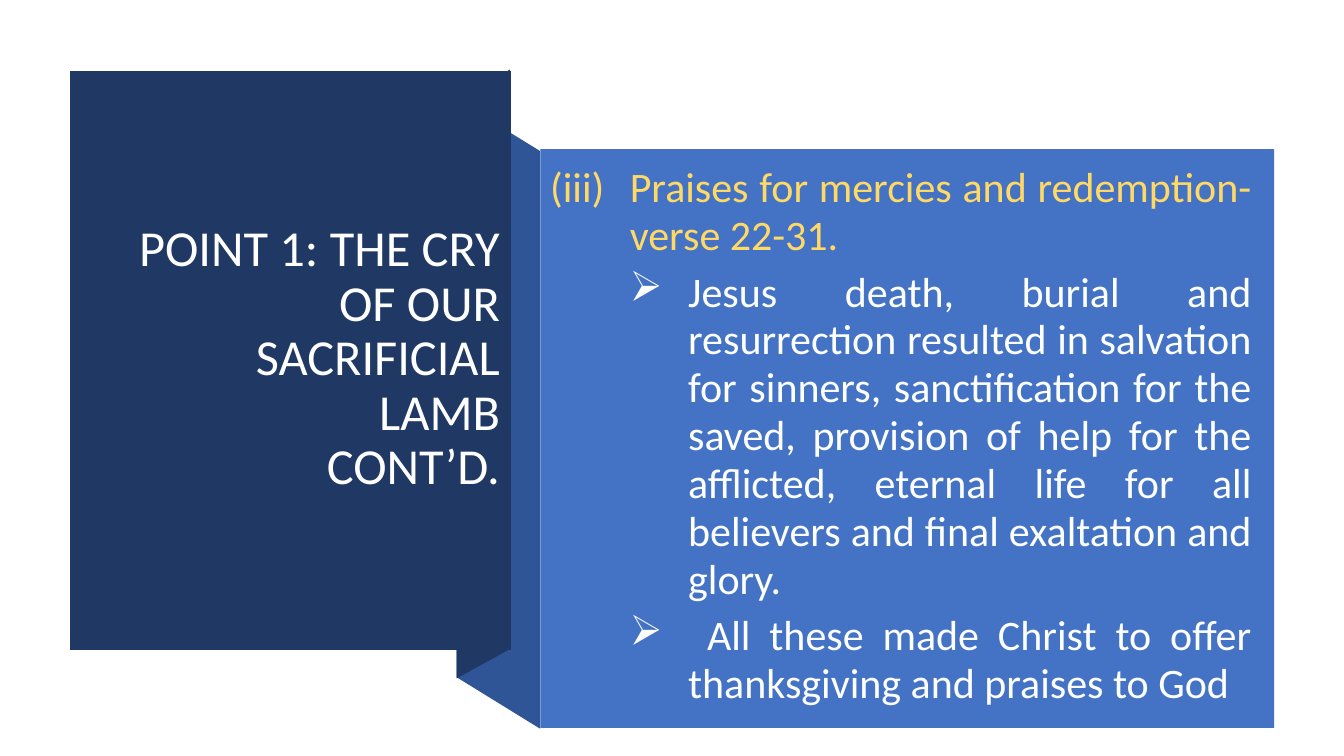
from dataclasses import dataclass

from lxml.etree import SubElement
from pptx import Presentation
from pptx.dml.color import RGBColor as Color
from pptx.enum.shapes import MSO_SHAPE as Preset
from pptx.enum.text import MSO_ANCHOR as Anchor, PP_ALIGN as Align
from pptx.oxml.ns import qn
from pptx.util import Pt


@dataclass(frozen=True)
class Theme:
    font: str = "Calibri"
    title_size: float = 36
    body_size: float = 30
    navy: str = "203864"
    fold: str = "2F5597"
    panel: str = "4472C4"
    white: str = "FFFFFF"
    body_text: str = "FEFFFF"
    gold: str = "FFD966"


THEME = Theme()
BLANK_LAYOUT = 6

FOLD_LEFT, PANEL_LEFT = 326.2, 385.9
BLOCK_LEFT, BLOCK_TOP, BLOCK_RIGHT, BLOCK_BOTTOM = 49.7, 50.4, 365, 464.4

RIBBON_SIDE = [(PANEL_LEFT, 520.6), (FOLD_LEFT, 483.8),
               (FOLD_LEFT, 71.3), (PANEL_LEFT, 108)]
RIBBON_BACK = [(364.3, 463.7), (FOLD_LEFT, 484.6),
               (FOLD_LEFT, 70.6), (364.3, 49.7)]
TITLE_BLOCK = [(BLOCK_LEFT, BLOCK_TOP), (BLOCK_RIGHT, BLOCK_TOP),
               (BLOCK_RIGHT, BLOCK_BOTTOM), (BLOCK_LEFT, BLOCK_BOTTOM)]

TITLE = "POINT 1: THE CRY OF OUR SACRIFICIAL LAMB CONT’D."
HEADING = "Praises for mercies and redemption- verse 22-31. "
POINTS = [
    "Jesus death, burial and resurrection resulted in salvation for sinners, "
    "sanctification for the saved, provision of help for the afflicted, "
    "eternal life for all believers and final exaltation and glory.",
    " All these made Christ to offer thanksgiving and praises to God",
]


def paint(shape, color):
    shape.shadow.inherit = False
    shape.fill.solid()
    shape.fill.fore_color.rgb = Color.from_string(color)
    shape.line.fill.background()


def add_polygon(slide, corners, color):
    start, *others = [(Pt(x), Pt(y)) for x, y in corners]
    builder = slide.shapes.build_freeform(*start)
    builder.add_line_segments(others, close=True)
    paint(builder.convert_to_shape(), color)


def add_panel(slide, left, top, width, height, color):
    panel = slide.shapes.add_shape(
        Preset.RECTANGLE, Pt(left), Pt(top), Pt(width), Pt(height))
    paint(panel, color)


def add_text_frame(slide, left, top, width, height):
    box = slide.shapes.add_textbox(Pt(left), Pt(top), Pt(width), Pt(height))
    frame = box.text_frame
    frame.word_wrap = True
    frame.vertical_anchor = Anchor.MIDDLE
    return frame


def write(paragraph, text, size, color, align, line_spacing, before=0):
    paragraph.alignment = align
    paragraph.line_spacing = line_spacing
    paragraph.space_before = Pt(before)
    paragraph.space_after = Pt(6)
    run = paragraph.add_run()
    run.text = text
    run.font.name = THEME.font
    run.font.size = Pt(size)
    run.font.color.rgb = Color.from_string(color)


def hang(paragraph, margin, hanging):
    properties = paragraph._p.get_or_add_pPr()
    properties.set("marL", str(Pt(margin)))
    properties.set("indent", str(-Pt(hanging)))
    return properties


def add_title(slide):
    frame = add_text_frame(slide, 80.6, 77, 283.7, 359.3)
    paragraph = frame.paragraphs[0]
    write(paragraph, TITLE, THEME.title_size, THEME.white,
          Align.RIGHT, 0.9, before=6)
    hang(paragraph, 91.4, 91.4)


def add_body(slide):
    frame = add_text_frame(slide, PANEL_LEFT, 112.3, 515.5, 398.9)
    heading = frame.paragraphs[0]
    write(heading, HEADING, THEME.body_size, THEME.gold, Align.JUSTIFY, 0.95)
    SubElement(hang(heading, 56.9, 56.9), qn("a:buAutoNum"),
               type="romanLcParenBoth", startAt="3")
    for text in POINTS:
        point = frame.add_paragraph()
        write(point, text, THEME.body_size, THEME.body_text,
              Align.JUSTIFY, 0.95)
        SubElement(hang(point, 98.6, 41.8), qn("a:buChar"), char="➢")


def main():
    presentation = Presentation()
    presentation.slide_width = Pt(960)
    presentation.slide_height = Pt(540)
    slide = presentation.slides.add_slide(
        presentation.slide_layouts[BLANK_LAYOUT])
    add_polygon(slide, RIBBON_SIDE, THEME.fold)
    add_polygon(slide, RIBBON_BACK, THEME.navy)
    add_polygon(slide, TITLE_BLOCK, THEME.navy)
    add_title(slide)
    add_panel(slide, PANEL_LEFT, 106.6, 524.2, 413.3, THEME.panel)
    add_body(slide)
    presentation.save("out.pptx")


if __name__ == "__main__":
    main()
